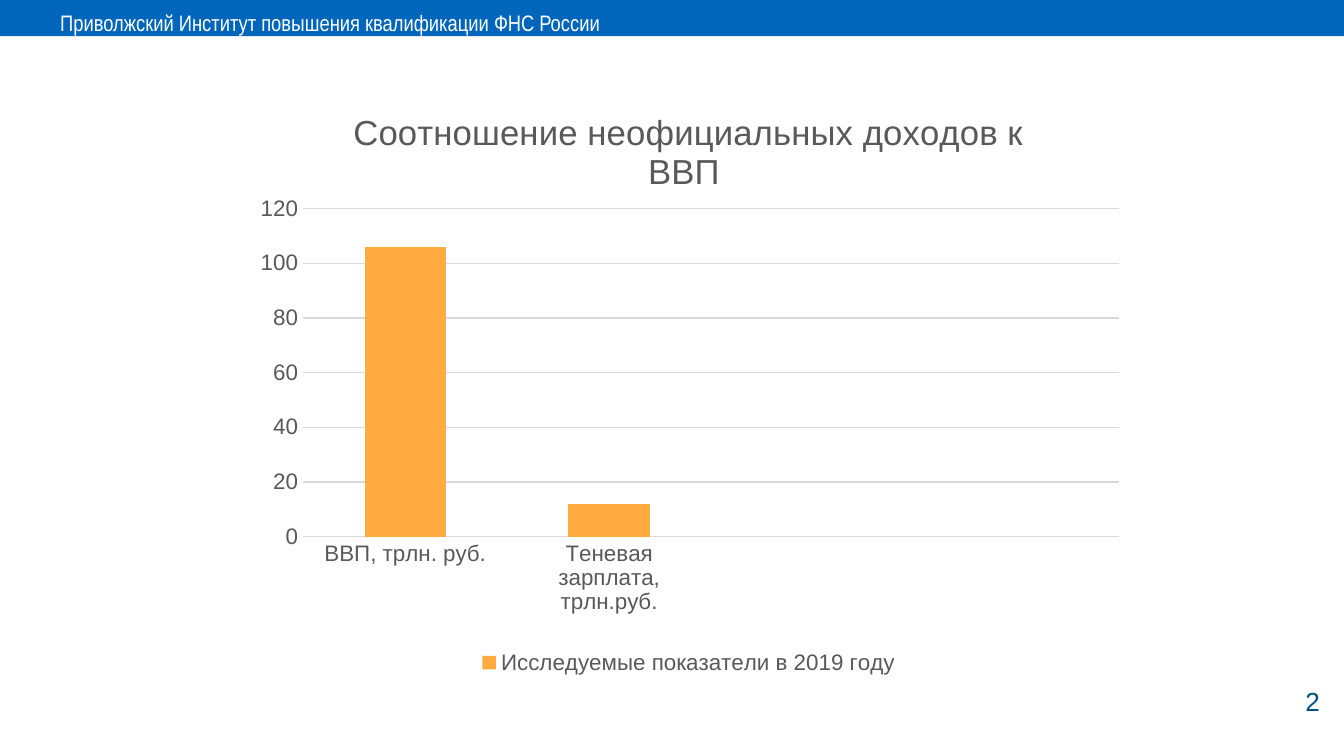
import pptx
import pptx.util
import pptx.chart.data
from lxml import etree
from pptx.dml.color import RGBColor
from pptx.enum.chart import XL_CHART_TYPE, XL_LEGEND_POSITION, XL_TICK_MARK
from pptx.enum.shapes import MSO_SHAPE
from pptx.enum.text import MSO_ANCHOR, PP_ALIGN
from pptx.oxml.ns import qn
from pptx.util import Inches, Pt

HEAD = "Приволжский Институт повышения квалификации ФНС России"
PAGE = "2"
TITLE = "Соотношение неофициальных доходов к ВВП "
SERIES = "Исследуемые показатели в 2019 году"
# Two slots on the right stay empty
BARS = [
    ("ВВП, трлн. руб.", 106),
    ("Теневая зарплата, трлн.руб.", 12),
    ("", None),
    ("", None),
]
# Plot area as shares of the chart
AREA = {"x": 0.07, "y": 0.21, "w": 0.91, "h": 0.55}

BLUE = RGBColor(0x00, 0x66, 0xBC)
NAVY = RGBColor(0x00, 0x4E, 0x88)
WHITE = RGBColor(0xFF, 0xFF, 0xFF)
GRAY = RGBColor(0x59, 0x59, 0x59)
RULE = RGBColor(0xD9, 0xD9, 0xD9)
ORANGE = RGBColor(0xFF, 0xAB, 0x40)


def style(font, face, size, color):
    font.name = face
    font.size = Pt(size)
    font.bold = False
    font.color.rgb = color


def add_text(slide, box, text, face, size, color, align):
    frame = slide.shapes.add_textbox(*map(Inches, box)).text_frame
    frame.word_wrap = True
    frame.vertical_anchor = MSO_ANCHOR.MIDDLE
    para = frame.paragraphs[0]
    para.text = text
    para.alignment = align
    style(para.font, face, size, color)


def drop_blanks(chart):
    """Leave unnamed categories without a label point."""
    for cat in list(chart.element.iter(qn("c:cat"))):
        for point in list(cat.iter(qn("c:pt"))):
            if not point.findtext(qn("c:v")):
                point.getparent().remove(point)


def place_plot(chart):
    area = next(chart.element.iter(qn("c:plotArea")))
    for old in area.findall(qn("c:layout")):
        area.remove(old)
    layout = etree.Element(qn("c:layout"))
    area.insert(0, layout)
    manual = etree.SubElement(layout, qn("c:manualLayout"))
    parts = [("layoutTarget", "inner"), ("xMode", "edge"), ("yMode", "edge")]
    for tag, value in parts + list(AREA.items()):
        etree.SubElement(manual, qn("c:" + tag)).set("val", str(value))


def add_bars(slide, box):
    data = pptx.chart.data.CategoryChartData()
    data.categories = [name for name, _ in BARS]
    data.add_series(SERIES, [value for _, value in BARS])
    chart = slide.shapes.add_chart(
        XL_CHART_TYPE.COLUMN_STACKED, *map(Inches, box), data).chart
    style(chart.font, "Arial", 12, GRAY)
    drop_blanks(chart)
    place_plot(chart)

    chart.has_title = True
    para = chart.chart_title.text_frame.paragraphs[0]
    para.text = TITLE
    style(para.font, "Arial", 18.6, GRAY)
    chart.chart_title.include_in_layout = False

    chart.has_legend = True
    chart.legend.position = XL_LEGEND_POSITION.BOTTOM
    chart.legend.include_in_layout = False
    style(chart.legend.font, "Arial", 12, GRAY)

    for axis in (chart.category_axis, chart.value_axis):
        axis.major_tick_mark = XL_TICK_MARK.NONE
        axis.minor_tick_mark = XL_TICK_MARK.NONE
        axis.format.line.fill.background()
        style(axis.tick_labels.font, "Arial", 12, GRAY)
    scale = chart.value_axis
    scale.minimum_scale, scale.maximum_scale, scale.major_unit = 0, 120, 20
    grid = scale.major_gridlines.format.line
    grid.color.rgb = RULE
    grid.width = Pt(0.75)

    plot = chart.plots[0]
    plot.gap_width = 150
    plot.overlap = 100
    plot.vary_by_categories = False
    fill = plot.series[0].format.fill
    fill.solid()
    fill.fore_color.rgb = ORANGE


def main():
    deck = pptx.Presentation()
    deck.slide_width = Inches(10)
    deck.slide_height = deck.slide_width * 9 // 16
    slide = deck.slides.add_slide(deck.slide_layouts[6])

    band = slide.shapes.add_shape(
        MSO_SHAPE.RECTANGLE, 0, 0, deck.slide_width, Inches(0.27))
    band.shadow.inherit = False
    band.fill.solid()
    band.fill.fore_color.rgb = BLUE
    band.line.fill.background()

    add_text(slide, (0.35, 0.02, 9.14, 0.3), HEAD,
             "Arial Narrow", 12, WHITE, PP_ALIGN.LEFT)
    add_text(slide, (9.25, 5.05, 0.67, 0.34), PAGE,
             "Arial", 14, NAVY, PP_ALIGN.RIGHT)
    add_bars(slide, (1.79, 0.62, 6.67, 4.44))
    deck.save("out.pptx")


if __name__ == "__main__":
    main()
